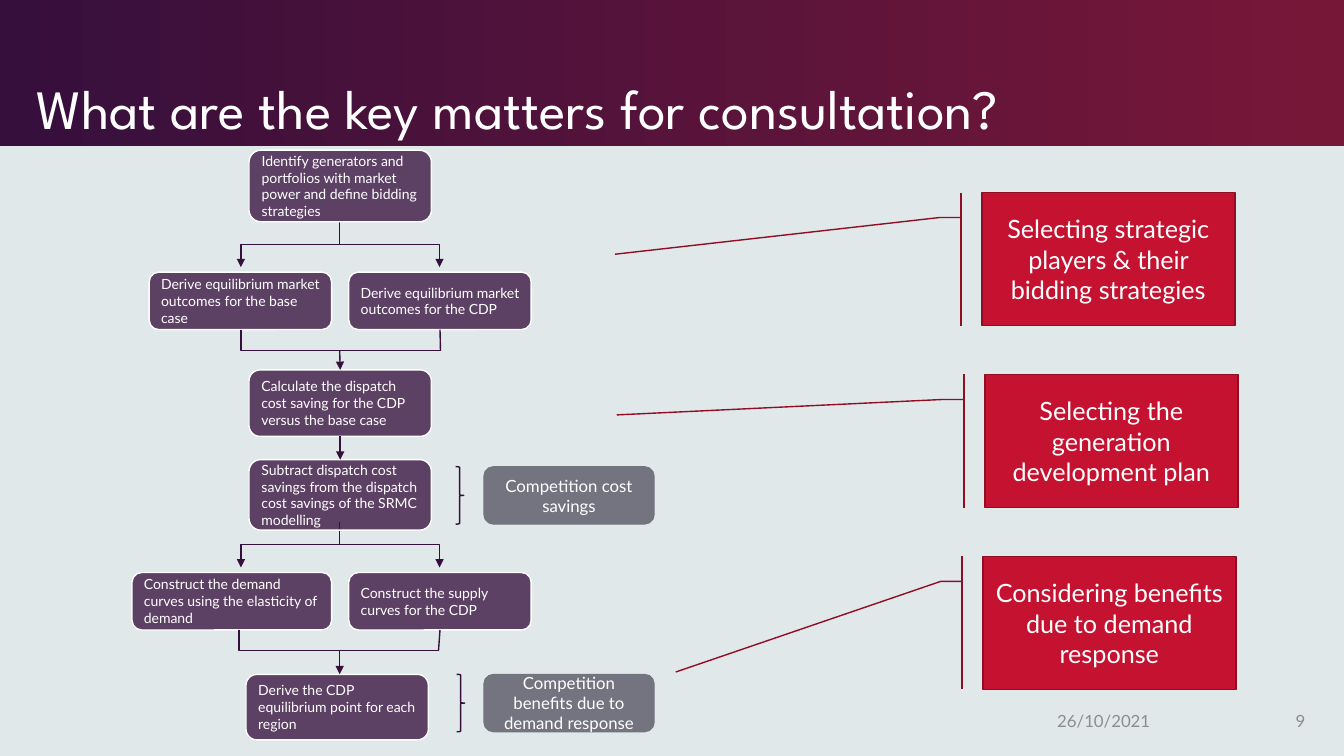
"""Build the consultation slide: a flow of steps and three callouts."""
from lxml import etree
from pptx import Presentation
from pptx import util as u
from pptx.dml.color import RGBColor
from pptx.enum import shapes, text
from pptx.oxml.ns import qn

COLS, ROWS = 133.33, 75
CELL = u.Inches(0.1)
PLUM = RGBColor(0x36, 0x0F, 0x3C)
WINE = RGBColor(0x77, 0x17, 0x38)
RED = RGBColor(0xC4, 0x12, 0x30)
DARK = RGBColor(0x91, 0x0D, 0x24)
SLATE = RGBColor(0x74, 0x74, 0x80)
GREY = RGBColor(0x8D, 0x8D, 0x8E)
PALE = RGBColor(0xE0, 0xE8, 0xEA)
WHITE = RGBColor(0xFF, 0xFF, 0xFF)

KIND = shapes.MSO_SHAPE
LINK = shapes.MSO_CONNECTOR
ALIGN = text.PP_ALIGN
MID = text.MSO_ANCHOR.MIDDLE

STEPS = {
    "start": (24.7, 14.9, 18.1, 7.1, "Identify generators and portfolios with market "
              "power and define bidding strategies"),
    "base": (14.8, 27, 18.1, 5.7, "Derive equilibrium market outcomes for the base case"),
    "plan": (34.6, 27, 18.1, 5.7, "Derive equilibrium market outcomes for the CDP"),
    "cost": (24.7, 36.7, 18.1, 6.6, "Calculate the dispatch cost saving for the CDP "
             "versus the base case"),
    "net": (24.7, 45.6, 18.1, 7, "Subtract dispatch cost savings from the dispatch "
            "cost savings of the SRMC modelling"),
    "need": (13.1, 56.8, 19.8, 5.7, "Construct the demand curves using the elasticity of demand"),
    "sell": (34.6, 56.8, 18.1, 5.7, "Construct the supply curves for the CDP"),
    "end": (24.4, 66.9, 18.1, 6.5, "Derive the CDP equilibrium point for each region"),
}
GAINS = [
    (46.3, 45.2, "Competition cost savings"),
    (66.9, 45.3, "Competition benefits due to demand response"),
]
TOPICS = [
    (97.4, 0.464, -1.45, "Selecting strategic players & their bidding strategies"),
    (97.7, 0.304, -1.455, "Selecting the generation development plan"),
    (97.5, 0.869, -1.214, "Considering benefits due to demand response"),
]


def grid(*vals):
    """Turn grid units into slide lengths."""
    return [u.Emu(round(val * CELL)) for val in vals]


def write(shape, words, size=12, color=WHITE, font="Lato", align=ALIGN.LEFT,
          anchor=MID, inset=None, lead=None):
    """Put formatted text in a shape."""
    frame = shape.text_frame
    frame.word_wrap = True
    frame.auto_size = text.MSO_AUTO_SIZE.NONE
    frame.vertical_anchor = anchor
    if inset is not None:
        gap = u.Inches(inset)
        frame.margin_left = frame.margin_right = gap
        frame.margin_top = frame.margin_bottom = gap
    frame.text = words
    para = frame.paragraphs[0]
    para.alignment = align
    para.line_spacing = lead
    para.font.size = u.Pt(size)
    para.font.name = font
    para.font.color.rgb = color


def block(slide, kind, place, fill=None, line=None, width=1):
    """Add a preset shape with a plain fill and line."""
    shape = slide.shapes.add_shape(kind, *grid(*place))
    shape.shadow.inherit = False
    if fill is None:
        shape.fill.background()
    else:
        shape.fill.solid()
        shape.fill.fore_color.rgb = fill
    if line is None:
        shape.line.fill.background()
    else:
        shape.line.color.rgb = line
        shape.line.width = u.Pt(width)
    return shape


def link(slide, kind, ends, head=False):
    """Add a plum connector, with an arrowhead at its end if asked."""
    line = slide.shapes.add_connector(kind, *grid(*ends))
    line.line.color.rgb = PLUM
    line.line.width = u.Pt(1)
    if head:
        etree.SubElement(line.line._get_or_add_ln(), qn("a:tailEnd"), type="triangle")
    etree.SubElement(line._element.spPr, qn("a:effectLst"))
    return line


def elbow(slide, x, y, endx, endy, head=False, bend=3):
    """Add a bent connector that leaves its start downwards."""
    midx, midy = (x + endx) / 2, (y + endy) / 2
    side = 1 if endx > x else -1
    dx, dy = side * (endy - y) / 2, abs(endx - x) / 2
    line = link(slide, LINK.ELBOW, (midx + dx, midy - dy, midx - dx, midy + dy), head)
    prop = line._element.spPr
    prop.find(qn("a:xfrm")).set("rot", str((270 if side > 0 else 90) * 60000))
    prop.find(qn("a:prstGeom")).set("prst", f"bentConnector{bend}")


def fork(slide, y):
    """Split the flow into its left and right columns."""
    for endx in (23.9, 43.6):
        elbow(slide, 33.7, y, endx, y + 4.5, head=True)


def join(slide, x, y, right, goal, fix):
    """Bring both columns together above the goal step."""
    low = y + 2.05
    elbow(slide, x, y, x + 19.8, low, bend=2)
    drop = link(slide, LINK.STRAIGHT, (x + 19.8, y, x + 19.8, low))
    drop.begin_connect(right, 2)
    tip = goal.top / CELL
    line = link(slide, LINK.STRAIGHT, (33.7, low, 33.7, tip), head=True)
    if fix:
        line.end_connect(goal, 0)


def step(slide, x, y, wide, high, words):
    """Add one translucent step of the flow."""
    box = block(slide, KIND.ROUNDED_RECTANGLE, (x, y, wide, high), PLUM, WHITE)
    tint = box._element.spPr.find(qn("a:solidFill"))[0]
    etree.SubElement(tint, qn("a:alpha"), val="77000")
    write(box, words, size=10, inset=0.09)
    return box


def gain(slide, y, x, words):
    """Add a brace and the grey result beside it."""
    block(slide, KIND.RIGHT_BRACE, (x, y, 0.8, 5.7), line=PLUM)
    box = block(slide, KIND.ROUNDED_RECTANGLE, (48, y, 16.9, 5.7), SLATE, SLATE, 0.75)
    write(box, words, align=ALIGN.CENTER)


def topic(slide, row, x, down, out, words):
    """Add a red callout whose line points at the flow."""
    box = block(slide, KIND.LINE_CALLOUT_2_BORDER_AND_ACCENT_BAR,
                (x, 19.1 + 18.05 * row, 25.1, 13.2), RED, DARK)
    for spot, val in enumerate((0.188, -0.083, 0.188, -0.167, down, out)):
        box.adjustments[spot] = val
    write(box, words, size=18, align=ALIGN.CENTER)


def header(slide):
    """Add the gradient band and the title over it."""
    title = slide.shapes.title
    title.left, title.top, title.width, title.height = grid(2.6, 1.5, 108.4, 13)
    write(title, "What are the key matters for consultation?", size=39.6,
          font="League Spartan", anchor=text.MSO_ANCHOR.BOTTOM, lead=0.9)
    band = block(slide, KIND.RECTANGLE, (0, 0, COLS, 14.5))
    band.fill.gradient()
    band.fill.gradient_angle = 0
    for stop, color, spot in zip(band.fill.gradient_stops, (PLUM, WINE), (0, 0.99)):
        stop.color.rgb = color
        stop.position = spot
    title._element.addprevious(band._element)


def footer(slide, x, wide, words, align):
    """Add a grey note at the foot of the slide."""
    box = slide.shapes.add_textbox(*grid(x, 69.5, wide, 4))
    write(box, words, color=GREY, align=align)


def main():
    """Build and save the slide."""
    deck = Presentation()
    deck.slide_width, deck.slide_height = grid(COLS, ROWS)
    slide = deck.slides.add_slide(deck.slide_layouts[5])
    slide.background.fill.solid()
    slide.background.fill.fore_color.rgb = PALE
    header(slide)
    for row, item in enumerate(TOPICS):
        topic(slide, row, *item)
    for y in (22, 51.8):
        fork(slide, y)
    flow = {key: step(slide, *item) for key, item in STEPS.items()}
    down = link(slide, LINK.STRAIGHT, (33.7, 43.3, 33.7, 45.6), head=True)
    down.begin_connect(flow["cost"], 2)
    down.end_connect(flow["net"], 0)
    join(slide, 23.9, 32.7, flow["plan"], flow["cost"], True)
    join(slide, 23.7, 62.5, flow["sell"], flow["end"], False)
    for item in GAINS:
        gain(slide, *item)
    footer(slide, 103.9, 19, "26/10/2021", ALIGN.LEFT)
    footer(slide, 124.2, 6.3, "9", ALIGN.RIGHT)
    deck.save("out.pptx")


if __name__ == "__main__":
    main()
